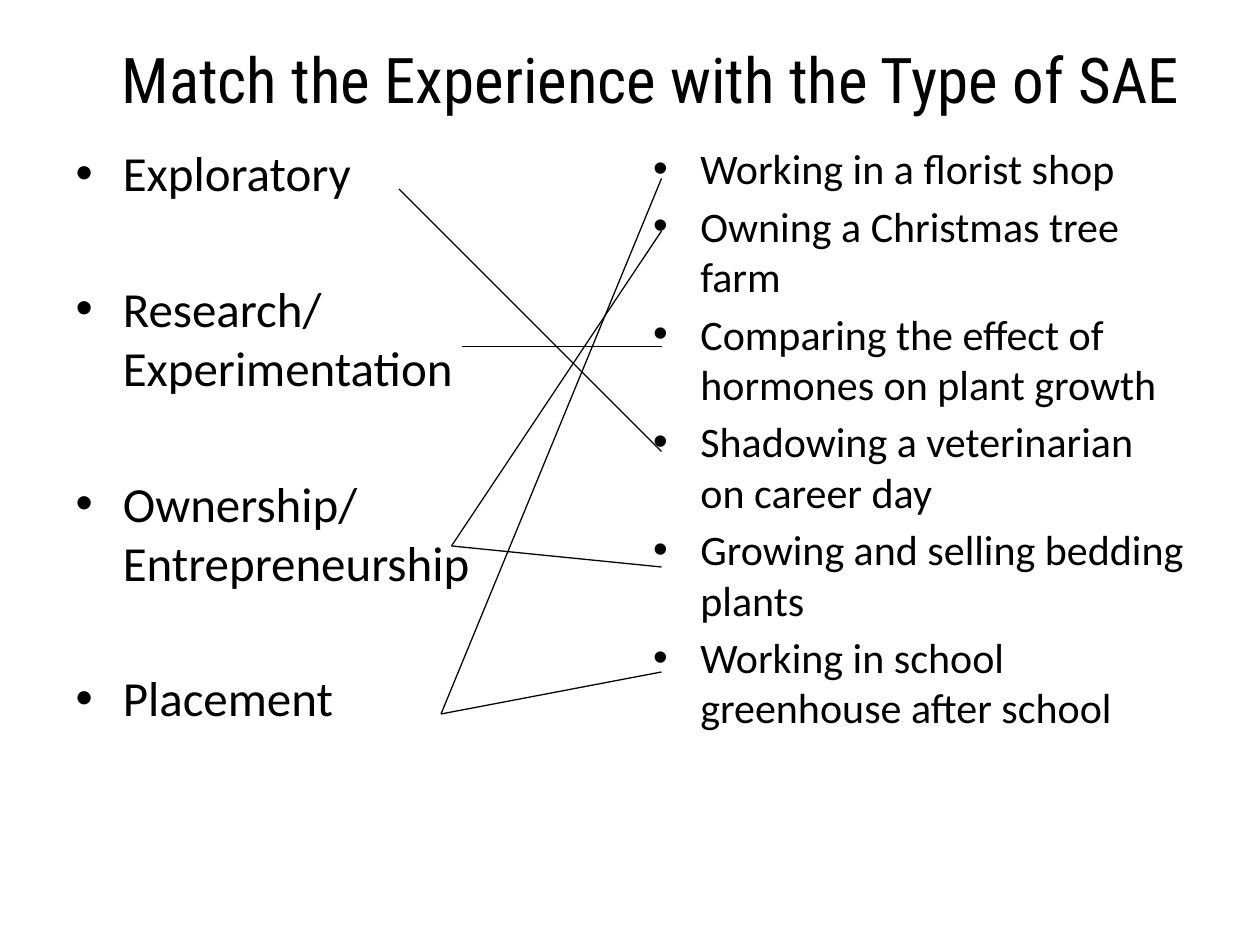
from pptx import Presentation
from pptx.dml.color import RGBColor as Rgb
from pptx.enum.shapes import MSO_CONNECTOR as Conn
from pptx.enum.text import MSO_ANCHOR as Anchor, MSO_AUTO_SIZE as Fit, PP_ALIGN as Align
from pptx.util import Pt
from lxml.etree import SubElement as Sub
from pptx.oxml.ns import qn

TITLE = "Match the Experience with the Type of SAE"
TYPES = ["Exploratory", "Research/ Experimentation",
         "Ownership/ Entrepreneurship", "Placement"]
JOBS = [
    "Working in a florist shop",
    "Owning a Christmas tree farm",
    "Comparing the effect of hormones on plant growth",
    "Shadowing a veterinarian on career day",
    "Growing and selling bedding plants",
    "Working in school greenhouse after school",
]
STARTS = [(228, 108), (264, 198), (258, 312), (252, 408)]
JOB_X = 378
JOB_YS = [102, 132, 198, 258, 324, 384]
PAIRS = [(1, 2), (3, 0), (2, 1), (2, 4), (3, 5), (0, 3)]
INK = "000000"


def color(code):
    return Rgb.from_string(code)


def fill(shape, box, lines, font, size, gap=0, align=Align.LEFT):
    shape.left, shape.top, shape.width, shape.height = map(Pt, box)
    frame = shape.text_frame
    frame.text = "\n".join(lines)
    frame.word_wrap = True
    frame.auto_size = Fit.NONE
    for i, para in enumerate(frame.paragraphs):
        para.alignment = align
        para.space_before = Pt(gap if i else 0)
        para.font.name = font
        para.font.size = Pt(size)
        para.font.color.rgb = color(INK)


def link(slide, start, end):
    line = slide.shapes.add_connector(Conn.STRAIGHT, *map(Pt, start + end))
    line.line.color.rgb = color(INK)
    line.line.width = Pt(0.75)
    Sub(line._element.spPr, qn("a:effectLst"))


def main():
    deck = Presentation()
    deck.slide_width, deck.slide_height = Pt(720), Pt(540)
    slide = deck.slides.add_slide(deck.slide_layouts[3])
    title, left, right = list(slide.placeholders)[:3]
    fill(title, (48, 0, 648, 90), [TITLE], "Roboto Condensed", 36, align=Align.CENTER)
    title.text_frame.vertical_anchor = Anchor.MIDDLE
    fill(left, (36, 78, 318, 356), TYPES, "Calibri", 28, 44)
    fill(right, (366, 78, 318, 356), JOBS, "Calibri", 24, 4)
    for kind, job in PAIRS:
        link(slide, STARTS[kind], (JOB_X, JOB_YS[job]))
    deck.save("out.pptx")


if __name__ == "__main__":
    main()
